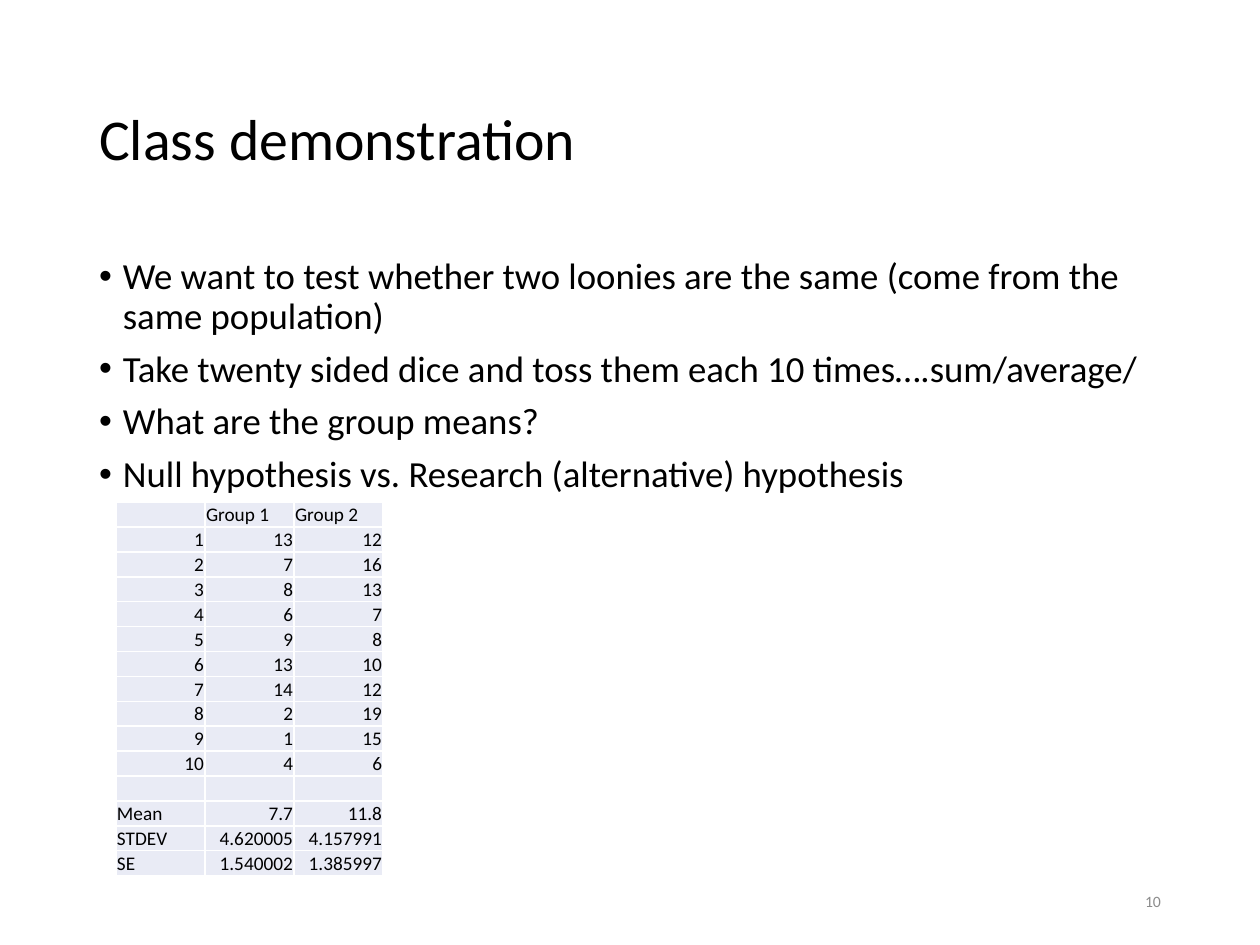
import dataclasses

import lxml.etree
import pptx
import pptx.dml.color
import pptx.enum.text
import pptx.oxml.ns
import pptx.util

Pt = pptx.util.Pt
qn = pptx.oxml.ns.qn
Align = pptx.enum.text.PP_ALIGN
Anchor = pptx.enum.text.MSO_ANCHOR


@dataclasses.dataclass(frozen=True)
class Theme:
    font: str = "Calibri"
    ink: str = "000000"
    gray: str = "8C8C8C"
    cell: str = "E9EBF5"
    rule: str = "FFFFFF"
    title: float = 33
    body: float = 21
    table: float = 11
    foot: float = 9


def paint(fill, color):
    fill.solid()
    fill.fore_color.rgb = pptx.dml.color.RGBColor.from_string(color)


def node(parent, tag, **attrs):
    return lxml.etree.SubElement(parent, qn(tag), attrs)


def write(para, text, *, font, size, color, align=Align.LEFT, lead=1.0, before=0):
    """Fill one paragraph; a blank one still keeps its type size."""
    para.alignment = align
    para.line_spacing = lead
    para.space_before = Pt(before)
    if not text:
        node(para._p, "a:endParaRPr", sz=str(size * 100))
        return
    run = para.add_run()
    run.text = text
    run.font.name = font
    run.font.size = Pt(size)
    paint(run.font.fill, color)


def bullet(para, hang):
    props = para._p.get_or_add_pPr()
    props.set("marL", str(Pt(hang)))
    props.set("indent", str(-Pt(hang)))
    node(props, "a:buFont", typeface="Arial")
    node(props, "a:buChar", char="•")


def border(cell, color, width):
    props = cell._tc.get_or_add_tcPr()
    for side in ("a:lnL", "a:lnR", "a:lnT", "a:lnB"):
        line = node(props, side, w=str(Pt(width)))
        node(node(line, "a:solidFill"), "a:srgbClr", val=color)


class Page:
    def __init__(self, slide, theme):
        self.slide = slide
        self.theme = theme

    def place(self, shape, box, anchor):
        shape.left, shape.top, shape.width, shape.height = map(Pt, box)
        frame = shape.text_frame
        frame.word_wrap = True
        frame.auto_size = pptx.enum.text.MSO_AUTO_SIZE.NONE
        frame.vertical_anchor = anchor
        return frame

    def title(self, text, box):
        look = self.theme
        frame = self.place(self.slide.shapes.title, box, Anchor.MIDDLE)
        write(frame.paragraphs[0], text, font=look.font, size=look.title,
              color=look.ink, lead=0.9)

    def body(self, items, box):
        look = self.theme
        frame = self.place(self.slide.placeholders[1], box, Anchor.TOP)
        for index, item in enumerate(items):
            para = frame.add_paragraph() if index else frame.paragraphs[0]
            write(para, item, font=look.font, size=look.body,
                  color=look.ink, lead=0.9, before=7.5)
            bullet(para, 13.5)

    def number(self, text, box):
        look = self.theme
        shape = self.slide.shapes.add_textbox(*map(Pt, box))
        frame = self.place(shape, box, Anchor.MIDDLE)
        write(frame.paragraphs[0], text, font=look.font, size=look.foot,
              color=look.gray, align=Align.RIGHT)

    def table(self, rows, box):
        shape = self.slide.shapes.add_table(len(rows), len(rows[0]), *map(Pt, box))
        grid = shape.table
        for row, texts in zip(grid.rows, rows):
            row.height = Pt(box[3] / len(rows))
            for cell, text in zip(row.cells, texts):
                self.cell(cell, text)

    def cell(self, cell, text):
        look = self.theme
        cell.margin_left = cell.margin_right = cell.margin_top = Pt(0.6)
        cell.margin_bottom = 0
        cell.vertical_anchor = Anchor.BOTTOM
        border(cell, look.rule, 1)
        paint(cell.fill, look.cell)
        digits = text.replace(".", "").isdigit()
        write(cell.text_frame.paragraphs[0], text, font=look.font,
              size=look.table, color=look.ink,
              align=Align.RIGHT if digits else Align.LEFT)


POINTS = [
    "We want to test whether two loonies are the same (come from the same population)",
    "Take twenty sided dice and toss them each 10 times….sum/average/",
    "What are the group means?",
    "Null hypothesis vs. Research (alternative) hypothesis",
]
GROUPS = [(13, 7, 8, 6, 9, 13, 14, 2, 1, 4), (12, 16, 13, 7, 8, 10, 12, 19, 15, 6)]
STATS = [
    ("Mean", "7.7", "11.8"),
    ("STDEV", "4.620005", "4.157991"),
    ("SE", "1.540002", "1.385997"),
]


def main():
    deck = pptx.Presentation()
    deck.slide_width, deck.slide_height = Pt(720), Pt(540)
    page = Page(deck.slides.add_slide(deck.slide_layouts[1]), Theme())
    tosses = [tuple(map(str, (toss, *pair)))
              for toss, pair in enumerate(zip(*GROUPS), 1)]
    rows = [("", "Group 1", "Group 2"), *tosses, ("", "", ""), *STATS]

    page.title("Class demonstration", (49.5, 28.75, 621, 104.4))
    page.body(POINTS, (49.5, 143.75, 621, 342.6))
    page.number("10", (508.5, 500.5, 162, 28.75))
    page.table(rows, (66.25, 286.9, 152.7, 213.75))
    deck.save("out.pptx")


if __name__ == "__main__":
    main()
